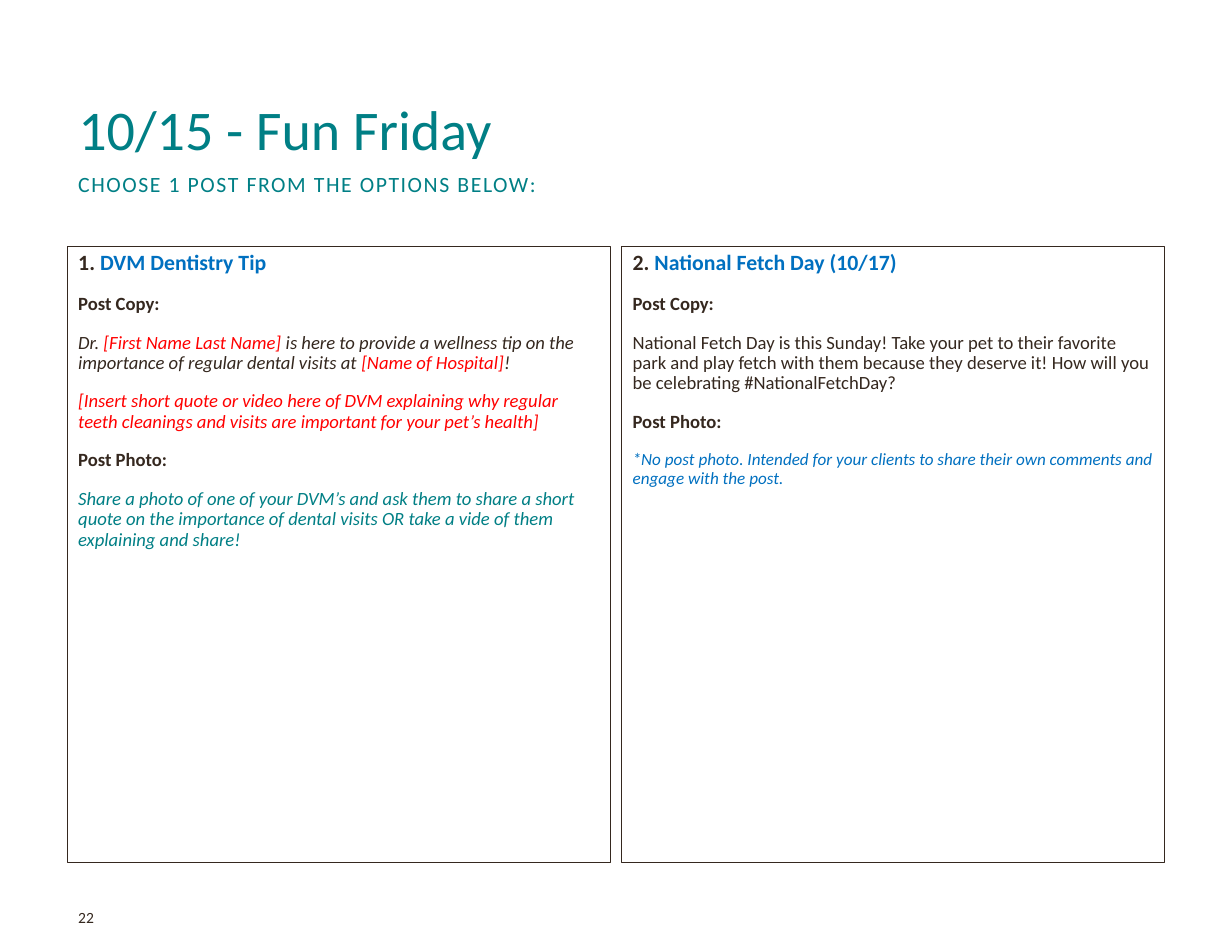
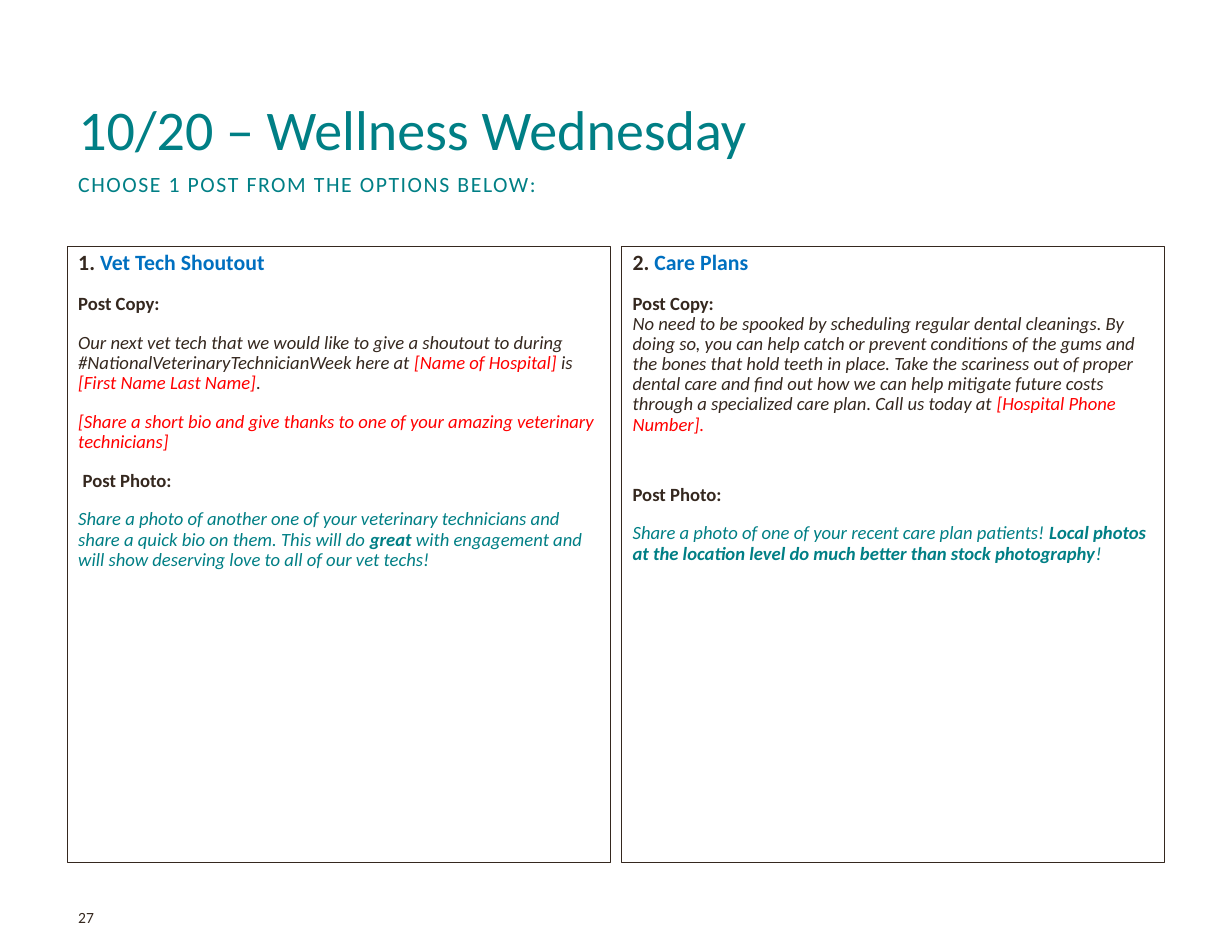
from dataclasses import dataclass
from typing import NamedTuple

import pptx
import pptx.dml.color
import pptx.enum.shapes
import pptx.enum.text
import pptx.util

PX = 9144  # EMU per px, 100 px to the inch


@dataclass(frozen=True)
class Theme:
    font: str = "Calibri"
    ink: str = "35281F"
    teal: str = "007F85"
    blue: str = "0070C0"
    red: str = "FF0000"
    title: int = 36
    heading: int = 14
    body: int = 12
    note: int = 11
    page: int = 10
    leading: float = 0.9
    gap: int = 12
    wide_gap: int = 32
    tracking: int = 1


THEME = Theme()


class Box(NamedTuple):
    left: int
    top: int
    width: int
    height: int

    def emu(self) -> list[int]:
        return [v * PX for v in self]


class Style(NamedTuple):
    color: str = THEME.ink
    size: int = THEME.body
    bold: bool = False
    italic: bool = False
    tracking: int = 0


class Run(NamedTuple):
    text: str
    style: Style


class Para(NamedTuple):
    runs: list[Run]
    before: int = THEME.gap
    indent: int = 0


class Post(NamedTuple):
    name: str
    paras: list[Para]


class Day(NamedTuple):
    title: str
    page: int
    posts: list[Post]


TITLE = Style(THEME.teal, THEME.title)
SUBTITLE = Style(THEME.teal, THEME.heading, tracking=THEME.tracking)
NUMBER = Style(size=THEME.heading, bold=True)
NAME = Style(THEME.blue, THEME.heading, bold=True)
LABEL = Style(bold=True)
PLAIN = Style()
COPY = Style(italic=True)
FILL_IN = Style(THEME.red, italic=True)
PHOTO = Style(THEME.teal, italic=True)
PHOTO_BOLD = Style(THEME.teal, bold=True, italic=True)
NOTE = Style(THEME.blue, THEME.note, italic=True)
PAGE = Style(size=THEME.page)

TITLE_BOX = Box(60, 50, 980, 100)
SUBTITLE_BOX = Box(60, 150, 980, 42)
PAGE_BOX = Box(60, 812, 248, 20)
POST_BOX = Box(60, 220, 485, 550)
POST_STEP = POST_BOX.width + 10

SUBTITLE_TEXT = "CHOOSE 1 POST FROM THE OPTIONS BELOW:"
POST_COPY = Para([Run("Post Copy:", LABEL)])
POST_PHOTO = Para([Run("Post Photo:", LABEL)])

DAYS = [
    Day("10/15 - Fun Friday", 22, [
        Post("DVM Dentistry Tip", [
            POST_COPY,
            Para([
                Run("Dr. ", COPY),
                Run("[First Name Last Name] ", FILL_IN),
                Run("is here to provide a wellness tip on the importance of "
                    "regular dental visits at ", COPY),
                Run("[Name of Hospital]", FILL_IN),
                Run("!", COPY),
            ]),
            Para([Run("[Insert short quote or video here of DVM explaining why regular "
                      "teeth cleanings and visits are important for your pet’s health]",
                      FILL_IN)]),
            POST_PHOTO,
            Para([Run("Share a photo of one of your DVM’s and ask them to share a short "
                      "quote on the importance of dental visits OR take a vide of them "
                      "explaining and share!", PHOTO)]),
        ]),
        Post("National Fetch Day (10/17)", [
            POST_COPY,
            Para([Run("National Fetch Day is this Sunday! Take your pet to their favorite "
                      "park and play fetch with them because they deserve it! How will you "
                      "be celebrating #NationalFetchDay?", PLAIN)]),
            POST_PHOTO,
            Para([Run("*No post photo. Intended for your clients to share their own "
                      "comments and engage with the post.", NOTE)]),
        ]),
    ]),
    Day("10/20 – Wellness Wednesday", 27, [
        Post("Vet Tech Shoutout", [
            POST_COPY,
            Para([
                Run("Our next vet tech that we would like to give a shoutout to during "
                    "#NationalVeterinaryTechnicianWeek here at ", COPY),
                Run("[Name of Hospital] ", FILL_IN),
                Run("is ", COPY),
                Run("[First Name Last Name]", FILL_IN),
                Run(".", COPY),
            ]),
            Para([Run("[Share a short bio and give thanks to one of your amazing "
                      "veterinary technicians]", FILL_IN)]),
            POST_PHOTO._replace(indent=4),
            Para([
                Run("Share a photo of another one of your veterinary technicians and share "
                    "a quick bio on them. This will do ", PHOTO),
                Run("great", PHOTO_BOLD),
                Run(" with engagement and will show deserving love to all of our vet techs!",
                    PHOTO),
            ]),
        ]),
        Post("Care Plans", [
            POST_COPY,
            Para([
                Run("No need to be spooked by scheduling regular dental cleanings. By doing "
                    "so, you can help catch or prevent conditions of the gums and the bones "
                    "that hold teeth in place. Take the scariness out of proper dental care "
                    "and find out how we can help mitigate future costs through a "
                    "specialized care plan. Call us today at ", COPY),
                Run("[Hospital Phone Number].", FILL_IN),
            ], before=0),
            POST_PHOTO._replace(before=THEME.wide_gap),
            Para([
                Run("Share a photo of one of your recent care plan patients! ", PHOTO),
                Run("Local photos at the location level do much better than stock "
                    "photography", PHOTO_BOLD),
                Run("!", PHOTO),
            ]),
        ]),
    ]),
]


def rgb(color: str) -> pptx.dml.color.RGBColor:
    return pptx.dml.color.RGBColor.from_string(color)


def add_run(p, run: Run) -> None:
    r = p.add_run()
    r.text = run.text
    style = run.style
    r.font.name = THEME.font
    r.font.size = pptx.util.Pt(style.size)
    r.font.bold = style.bold
    r.font.italic = style.italic
    r.font.color.rgb = rgb(style.color)
    if style.tracking:
        r.font._element.set("spc", str(style.tracking * 100))


def write(sp, paras: list[Para], anchor=pptx.enum.text.MSO_ANCHOR.TOP,
          leading: float = THEME.leading) -> None:
    """Fill the shape with left-aligned paragraphs; the first has no space before."""
    tf = sp.text_frame
    tf.word_wrap = True
    tf.auto_size = pptx.enum.text.MSO_AUTO_SIZE.NONE
    tf.vertical_anchor = anchor
    for i, para in enumerate(paras):
        p = tf.add_paragraph() if i else tf.paragraphs[0]
        p.alignment = pptx.enum.text.PP_ALIGN.LEFT
        p.line_spacing = leading
        p.space_before = pptx.util.Pt(para.before if i else 0)
        if para.indent:
            p._p.get_or_add_pPr().set("marL", str(para.indent * PX))
        for run in para.runs:
            add_run(p, run)


def add_title(s, text: str) -> None:
    sp = s.shapes.title
    sp.left, sp.top, sp.width, sp.height = TITLE_BOX.emu()
    write(sp, [Para([Run(text, TITLE)])], pptx.enum.text.MSO_ANCHOR.BOTTOM)


def add_post(s, index: int, post: Post) -> None:
    box = POST_BOX._replace(left=POST_BOX.left + index * POST_STEP)
    sp = s.shapes.add_shape(pptx.enum.shapes.MSO_SHAPE.RECTANGLE, *box.emu())
    sp.shadow.inherit = False
    sp.fill.background()
    sp.line.color.rgb = rgb(THEME.ink)
    sp.line.width = pptx.util.Pt(0.75)
    heading = Para([Run(f"{index + 1}. ", NUMBER), Run(post.name, NAME)])
    write(sp, [heading, *post.paras])


def add_day(prs, day: Day) -> None:
    s = prs.slides.add_slide(prs.slide_layouts[5])
    add_title(s, day.title)
    write(s.shapes.add_textbox(*SUBTITLE_BOX.emu()), [Para([Run(SUBTITLE_TEXT, SUBTITLE)])])
    for index, post in enumerate(day.posts):
        add_post(s, index, post)
    write(s.shapes.add_textbox(*PAGE_BOX.emu()), [Para([Run(str(day.page), PAGE)])],
          pptx.enum.text.MSO_ANCHOR.BOTTOM, leading=1.0)


def main() -> None:
    prs = pptx.Presentation()
    prs.slide_width, prs.slide_height = 1100 * PX, 850 * PX
    for day in DAYS:
        add_day(prs, day)
    prs.save("out.pptx")


if __name__ == "__main__":
    main()
